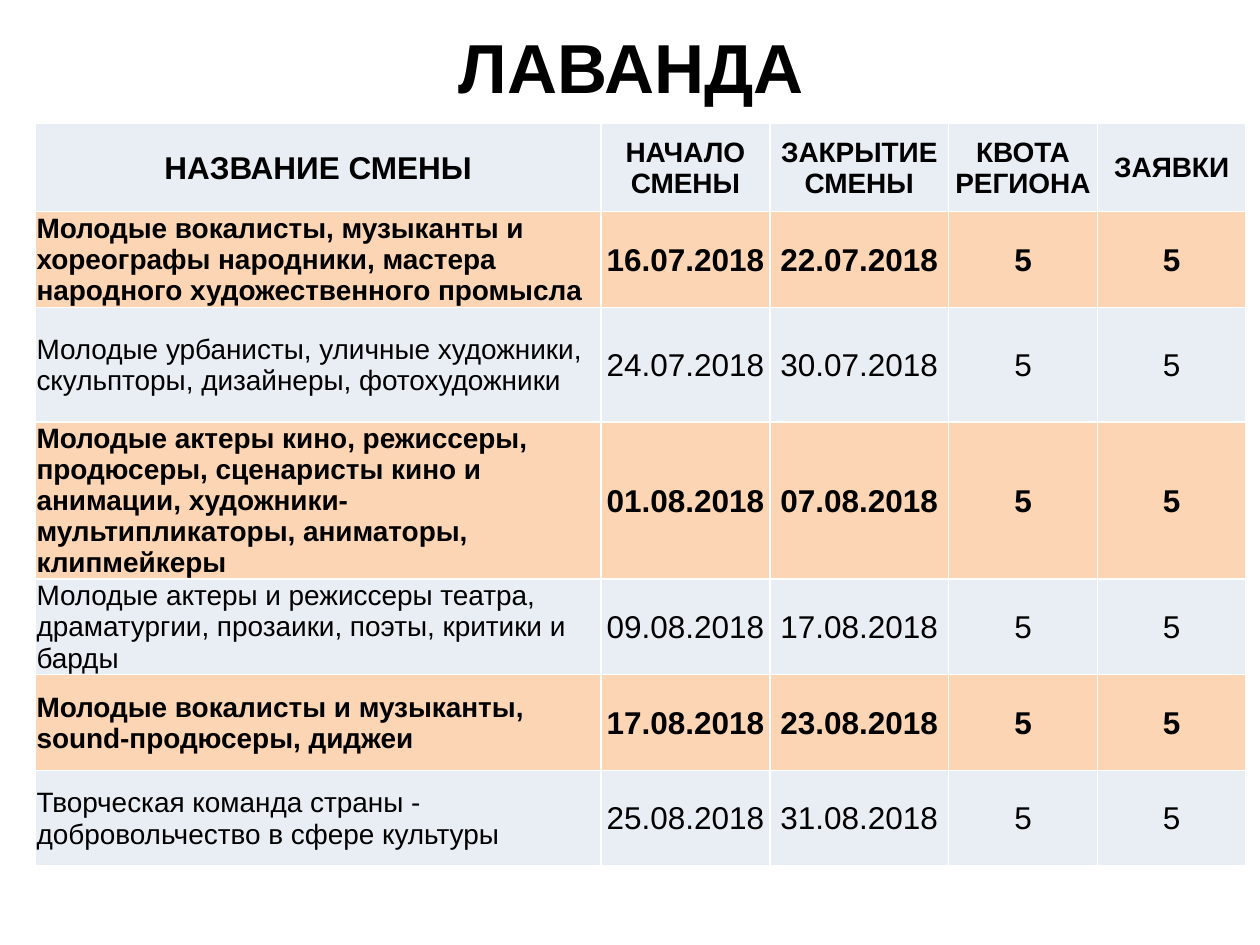
from lxml.etree import SubElement
from pptx import Presentation
from pptx.dml.color import RGBColor
from pptx.enum.text import MSO_ANCHOR, MSO_AUTO_SIZE, PP_ALIGN
from pptx.oxml.ns import qn
from pptx.util import Inches, Pt

COLORS = {"text": "000000", "plain": "E9EDF4", "accent": "FCD5B5", "border": "FFFFFF"}
FONT = "Arial"
COLUMN_WIDTHS = [4.49, 1.34, 1.42, 1.18, 1.18]
ROW_HEIGHTS = [0.7, 0.76, 0.91, 0.72, 0.76, 0.76, 0.76]
HEADERS = ["НАЗВАНИЕ СМЕНЫ", "НАЧАЛО СМЕНЫ", "ЗАКРЫТИЕ СМЕНЫ", "КВОТА РЕГИОНА", "ЗАЯВКИ"]
SHIFTS = [
    ["Молодые вокалисты, музыканты и хореографы народники, мастера народного художественного промысла",
     "16.07.2018", "22.07.2018", "5", "5"],
    ["Молодые урбанисты, уличные художники, скульпторы, дизайнеры, фотохудожники",
     "24.07.2018", "30.07.2018", "5", "5"],
    ["Молодые актеры кино, режиссеры, продюсеры, сценаристы кино и анимации, "
     "художники-мультипликаторы, аниматоры, клипмейкеры",
     "01.08.2018", "07.08.2018", "5", "5"],
    ["Молодые актеры и режиссеры театра, драматургии, прозаики, поэты, критики и барды",
     "09.08.2018", "17.08.2018", "5", "5"],
    ["Молодые вокалисты и музыканты, sound-продюсеры, диджеи",
     "17.08.2018", "23.08.2018", "5", "5"],
    ["Творческая команда страны - добровольчество в сфере культуры",
     "25.08.2018", "31.08.2018", "5", "5"],
]


def write_text(frame, text, size=18, bold=False, align=PP_ALIGN.CENTER):
    frame.word_wrap = True
    para = frame.paragraphs[0]
    para.alignment = align
    span = para.add_run()
    span.text = text
    span.font.name = FONT
    span.font.size = Pt(size)
    span.font.bold = bold
    span.font.color.rgb = RGBColor.from_string(COLORS["text"])


def add_borders(cell):
    properties = cell._tc.get_or_add_tcPr()
    for position, side in enumerate(("lnL", "lnR", "lnT", "lnB")):
        line = SubElement(properties, qn(f"a:{side}"), w=str(Pt(1)))
        fill = SubElement(line, qn("a:solidFill"))
        SubElement(fill, qn("a:srgbClr"), val=COLORS["border"])
        properties.insert(position, line)


def format_cell(cell, text, fill, **text_format):
    cell.margin_left = cell.margin_right = cell.margin_top = Inches(0.01)
    cell.margin_bottom = 0
    cell.vertical_anchor = MSO_ANCHOR.MIDDLE
    cell.fill.solid()
    cell.fill.fore_color.rgb = RGBColor.from_string(COLORS[fill])
    add_borders(cell)
    write_text(cell.text_frame, text, **text_format)


def add_title(page, text):
    title = page.shapes.title
    title.left, title.top = Inches(0.51), Inches(0.21)
    title.width, title.height = Inches(9), Inches(0.63)
    frame = title.text_frame
    frame.auto_size = MSO_AUTO_SIZE.NONE
    frame.vertical_anchor = MSO_ANCHOR.MIDDLE
    write_text(frame, text, size=39.6, bold=True)


def add_shift_table(page):
    table = page.shapes.add_table(
        len(ROW_HEIGHTS), len(COLUMN_WIDTHS), Inches(0.28), Inches(0.98),
        Inches(sum(COLUMN_WIDTHS)), Inches(sum(ROW_HEIGHTS))).table
    for column, width in zip(table.columns, COLUMN_WIDTHS):
        column.width = Inches(width)
    for row, height in zip(table.rows, ROW_HEIGHTS):
        row.height = Inches(height)
    for index, header in enumerate(HEADERS):
        format_cell(table.cell(0, index), header, "plain", size=16 if index else 18, bold=True)
    for number, shift in enumerate(SHIFTS, start=1):
        accented = number % 2 == 1
        for index, text in enumerate(shift):
            format_cell(table.cell(number, index), text, "accent" if accented else "plain",
                        size=18 if index else 16, bold=accented,
                        align=PP_ALIGN.CENTER if index else PP_ALIGN.LEFT)


def main():
    deck = Presentation()
    deck.slide_width, deck.slide_height = Inches(10), Inches(7.5)
    page = deck.slides.add_slide(deck.slide_layouts[5])
    add_title(page, "ЛАВАНДА")
    add_shift_table(page)
    deck.save("out.pptx")


if __name__ == "__main__":
    main()
